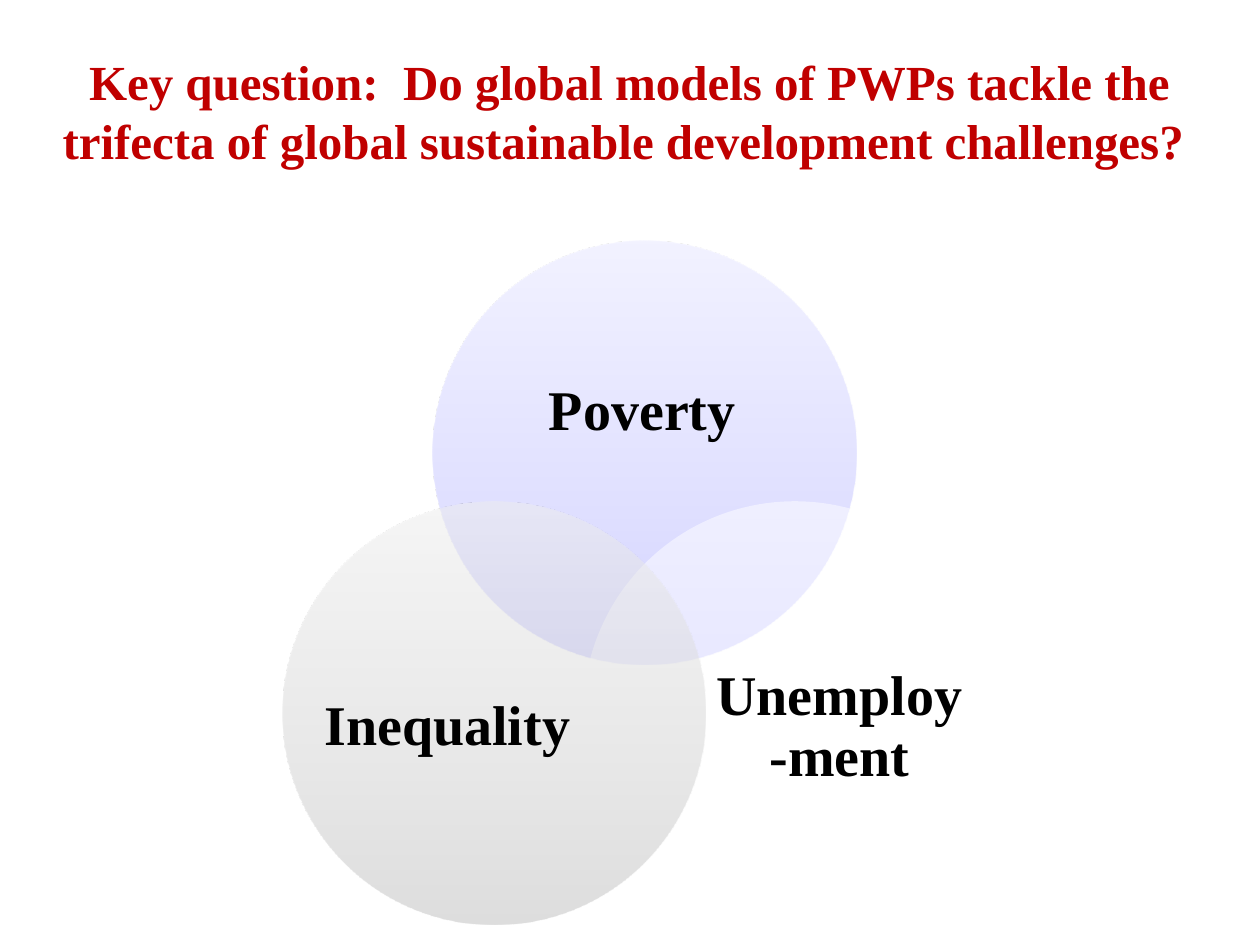
import math
from dataclasses import dataclass

import lxml.etree
import pptx
import pptx.dml.color
import pptx.enum.shapes
import pptx.enum.text
import pptx.oxml
import pptx.oxml.ns
import pptx.util

Inches = pptx.util.Inches
ANCHOR = pptx.enum.text.MSO_ANCHOR


@dataclass(frozen=True)
class Theme:
    font: str = "Times New Roman"
    title_size: int = 28
    label_size: int = 32
    title_color: str = "C00000"
    label_color: str = "000000"
    opacity: int = 50
    lilac: tuple = ((0, "A7A7FF"), (35, "C1C1FF"), (100, "E7E7FF"))
    white: tuple = ((0, "FFFFFF"), (100, "FFFFFF"))
    grey: tuple = ((0, "BDBDBD"), (35, "D1D1D1"), (100, "EEEEEE"))


THEME = Theme()
TITLE = ("Key question:  Do global models of PWPs tackle the trifecta "
         "of global sustainable development challenges? ")

# Column and row of each circle in half-steps, its fill,
# and its label box as shares of the diameter
CIRCLES = [
    ("Poverty", 1, 0, THEME.lilac, (0.13, 0.18, 0.73, 0.45)),
    ("Unemploy-ment", 2, 1, THEME.white, (0.305, 0.26, 0.6, 0.55)),
    ("Inequality", 0, 1, THEME.grey, (0.09, 0.26, 0.6, 0.55)),
]


def set_attrs(obj, values):
    for name, value in values.items():
        setattr(obj, name, value)


def add_text(shapes, box, text, size, color, frame_format, par_format):
    tf = shapes.add_textbox(*map(Inches, box)).text_frame
    set_attrs(tf, {"word_wrap": True, **frame_format})
    p = tf.paragraphs[0]
    set_attrs(p, {"alignment": pptx.enum.text.PP_ALIGN.CENTER, **par_format})
    r = p.add_run()
    r.text = text
    set_attrs(r.font, {"name": THEME.font, "size": pptx.util.Pt(size), "bold": True})
    r.font.color.rgb = pptx.dml.color.RGBColor.from_string(color)


def fill_translucent(sp, stops):
    """Fill a shape with a translucent gradient that runs from bottom to top."""
    sp.fill.background()
    no_fill = sp._element.spPr.find(pptx.oxml.ns.qn("a:noFill"))
    gs = "".join(
        f'<a:gs pos="{pos * 1000}"><a:srgbClr val="{color}">'
        f'<a:alpha val="{THEME.opacity * 1000}"/></a:srgbClr></a:gs>'
        for pos, color in stops)
    grad = pptx.oxml.parse_xml(
        f'<a:gradFill {pptx.oxml.ns.nsdecls("a")} rotWithShape="1">'
        f'<a:gsLst>{gs}</a:gsLst><a:lin ang="16200000" scaled="0"/></a:gradFill>')
    no_fill.getparent().replace(no_fill, grad)


def add_title(slide, box):
    add_text(slide.shapes, box, TITLE, THEME.title_size, THEME.title_color,
             {"vertical_anchor": ANCHOR.TOP},
             {"space_before": pptx.util.Pt(4)})


def add_venn(slide, box):
    left, top, width, height = box
    # Centres form an equilateral triangle that fills the box
    d = (height - width * math.sqrt(3) / 2) / (1 - math.sqrt(3) / 2)
    dx, dy = (width - d) / 2, height - d
    shapes = slide.shapes.add_group_shape().shapes
    for text, col, row, stops, (lx, ly, lw, lh) in CIRCLES:
        x, y = left + col * dx, top + row * dy
        # Circle
        sp = shapes.add_shape(pptx.enum.shapes.MSO_SHAPE.OVAL,
                              *map(Inches, (x, y, d, d)))
        sp.shadow.inherit = False
        sp.line.fill.background()
        fill_translucent(sp, stops)
        # Label
        margins = dict.fromkeys(
            ("margin_left", "margin_top", "margin_right", "margin_bottom"), 0)
        add_text(shapes, (x + lx * d, y + ly * d, lw * d, lh * d), text,
                 THEME.label_size, THEME.label_color,
                 {"vertical_anchor": ANCHOR.MIDDLE, **margins},
                 {"line_spacing": 0.9})


def main():
    prs = pptx.Presentation()
    set_attrs(prs, {"slide_width": Inches(10), "slide_height": Inches(7.5)})
    slide = prs.slides.add_slide(prs.slide_layouts[6])
    add_venn(slide, (2.24, 1.91, 5.75, 5.43))
    add_title(slide, (0.31, 0.36, 9.37, 1.29))
    prs.save("out.pptx")


if __name__ == "__main__":
    main()
